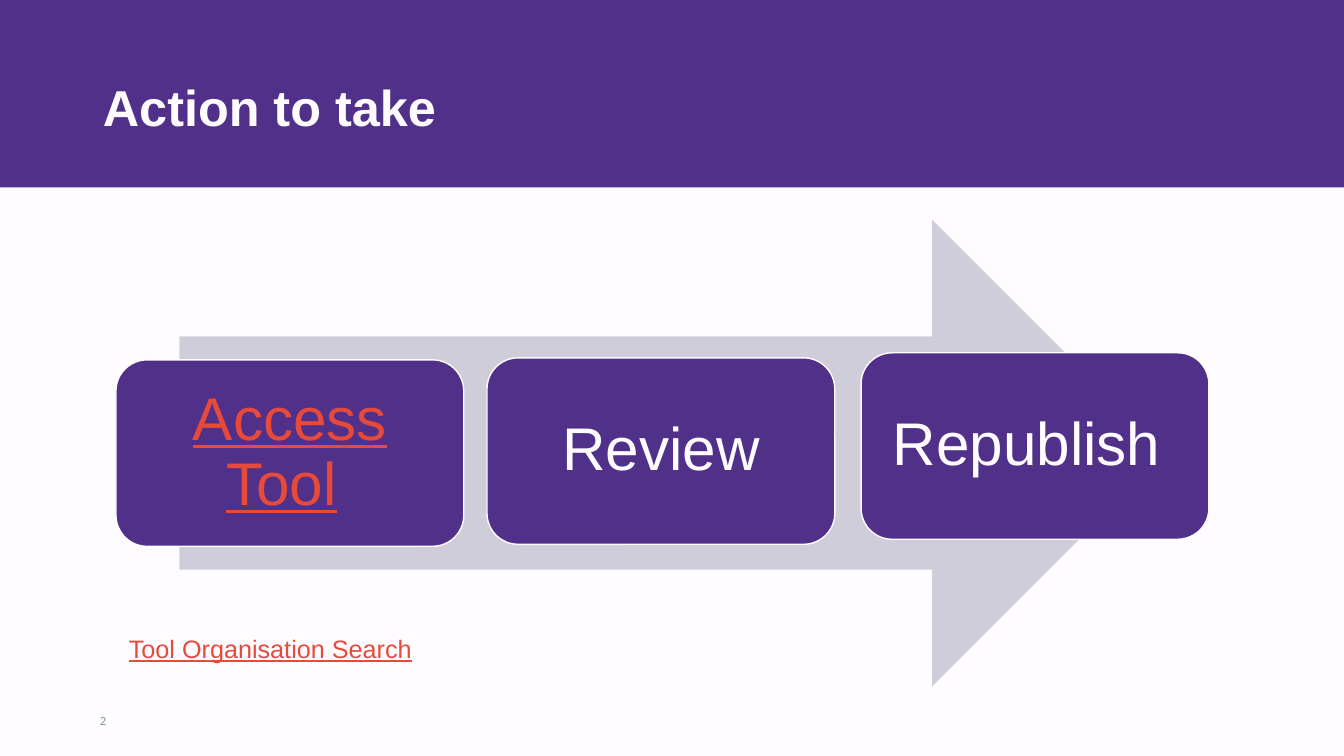
"""Build the "Action to take" process slide."""
from pptx import Presentation
from pptx.dml.color import RGBColor
from pptx.enum.shapes import MSO_SHAPE
from pptx.enum.text import MSO_ANCHOR, PP_ALIGN
from pptx.util import Inches, Pt

RECTANGLE = MSO_SHAPE.RECTANGLE
ROUNDED = MSO_SHAPE.ROUNDED_RECTANGLE
ARROW = MSO_SHAPE.RIGHT_ARROW
MIDDLE = MSO_ANCHOR.MIDDLE
LEFT, CENTER = PP_ALIGN.LEFT, PP_ALIGN.CENTER

PURPLE = RGBColor(0x51, 0x30, 0x89)
WHITE = RGBColor(0xFE, 0xFC, 0xFF)
LILAC = RGBColor(0xD0, 0xCD, 0xDA)
RED = RGBColor(0xE7, 0x4A, 0x3B)
GREY = RGBColor(0x8E, 0x8E, 0x9A)

STEP_WIDTH, STEP_HEIGHT = 3.45, 1.85
STEPS = [
    ("Access Tool", 1.15, 3.57, True),
    ("Review", 4.83, 3.55, False),
    ("Republish ", 8.54, 3.5, False),
]


def set_font(font, size, color, name="Arial", bold=False, underline=False):
    """Apply the typeface, size, colour and emphasis to a font."""
    font.name = name
    font.size = Pt(size)
    font.color.rgb = color
    font.bold = bold
    font.underline = underline


def add_filled_shape(page, kind, left, top, width, height, color):
    """Add a flat preset shape without an outline."""
    shape = page.shapes.add_shape(
        kind, Inches(left), Inches(top), Inches(width), Inches(height))
    shape.shadow.inherit = False
    shape.fill.solid()
    shape.fill.fore_color.rgb = color
    shape.line.fill.background()
    return shape


def add_step(page, label, left, top, linked):
    """Add one labelled step of the process."""
    step = add_filled_shape(
        page, ROUNDED, left, top, STEP_WIDTH, STEP_HEIGHT, PURPLE)
    step.line.color.rgb = WHITE
    step.line.width = Pt(1)
    frame = step.text_frame
    frame.word_wrap = True
    frame.vertical_anchor = MIDDLE
    frame.margin_left = frame.margin_right = Inches(0.18)
    frame.margin_top = frame.margin_bottom = Inches(0.18)
    para = frame.paragraphs[0]
    para.alignment = CENTER
    para.line_spacing = 0.9
    set_font(para.font, 43, WHITE)
    span = para.add_run()
    span.text = label
    if linked:
        set_font(span.font, 43, RED, underline=True)
        para.add_run().text = " "


def add_label(page, text, left, top, width, height, **style):
    """Add a single line of text in its own box."""
    box = page.shapes.add_textbox(
        Inches(left), Inches(top), Inches(width), Inches(height))
    frame = box.text_frame
    frame.word_wrap = True
    frame.text = text
    set_font(frame.paragraphs[0].font, **style)
    return box


def add_title(page, text):
    """Place the title placeholder above the header band."""
    title = page.shapes.title
    title.left, title.top = Inches(0.92), Inches(0.41)
    title.width, title.height = Inches(10.08), Inches(1.3)
    frame = title.text_frame
    frame.text = text
    frame.vertical_anchor = MIDDLE
    para = frame.paragraphs[0]
    para.alignment = LEFT
    set_font(para.font, 36, WHITE, bold=True)
    page.shapes._spTree.append(title._element)


def main():
    """Assemble the slide and save the deck."""
    deck = Presentation()
    deck.slide_width, deck.slide_height = Inches(13.33), Inches(7.5)
    page = deck.slides.add_slide(deck.slide_layouts[5])
    page.background.fill.solid()
    page.background.fill.fore_color.rgb = WHITE

    add_filled_shape(page, RECTANGLE, 0, -0.02, 13.33, 1.88, PURPLE)
    add_title(page, "Action to take")
    number = add_label(page, "2", 0.92, 6.95, 3, 0.4,
                       size=9, color=GREY, name="Calibri")
    number.text_frame.vertical_anchor = MIDDLE
    number.text_frame.margin_left = Inches(0.07)
    add_filled_shape(page, ARROW, 1.78, 2.18, 9.78, 4.63, LILAC)
    for step in STEPS:
        add_step(page, *step)
    add_label(page, "Tool Organisation Search", 1.18, 6.23, 6.67, 0.4,
              size=18, color=RED, underline=True)
    deck.save("out.pptx")


if __name__ == "__main__":
    main()
